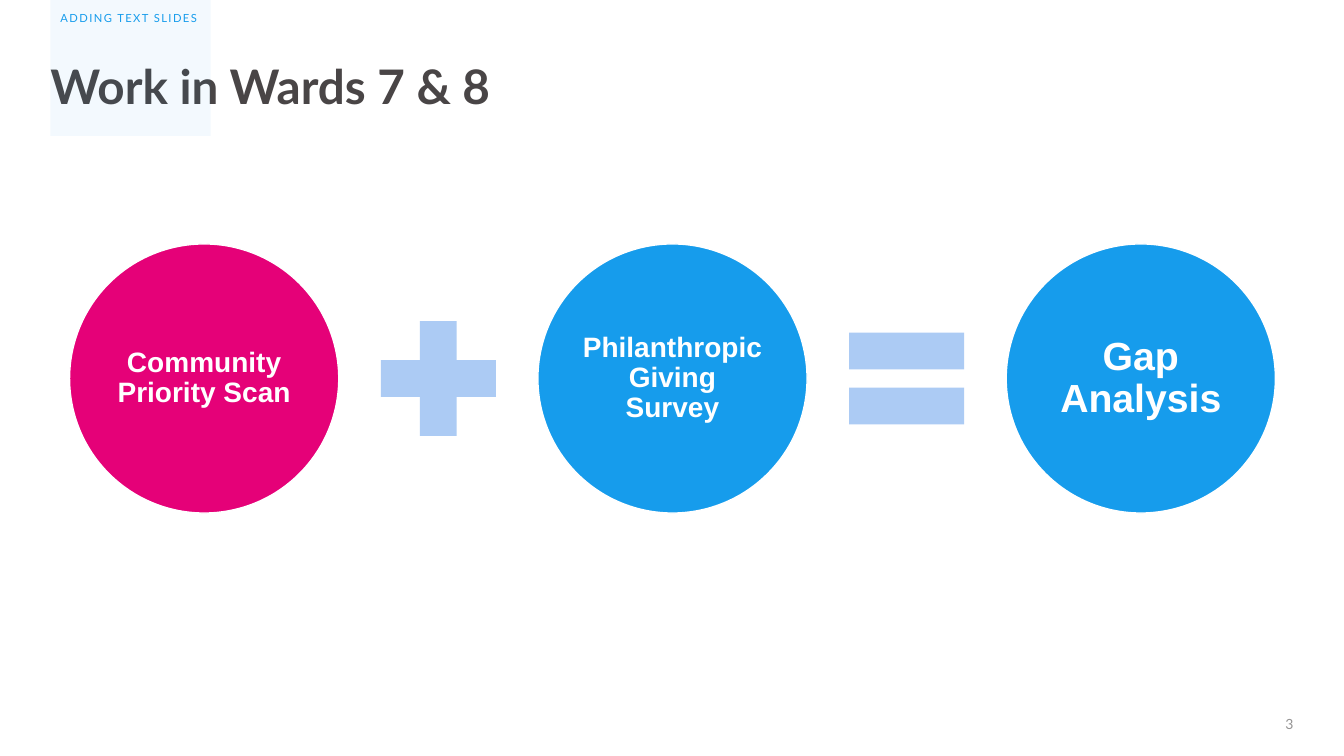
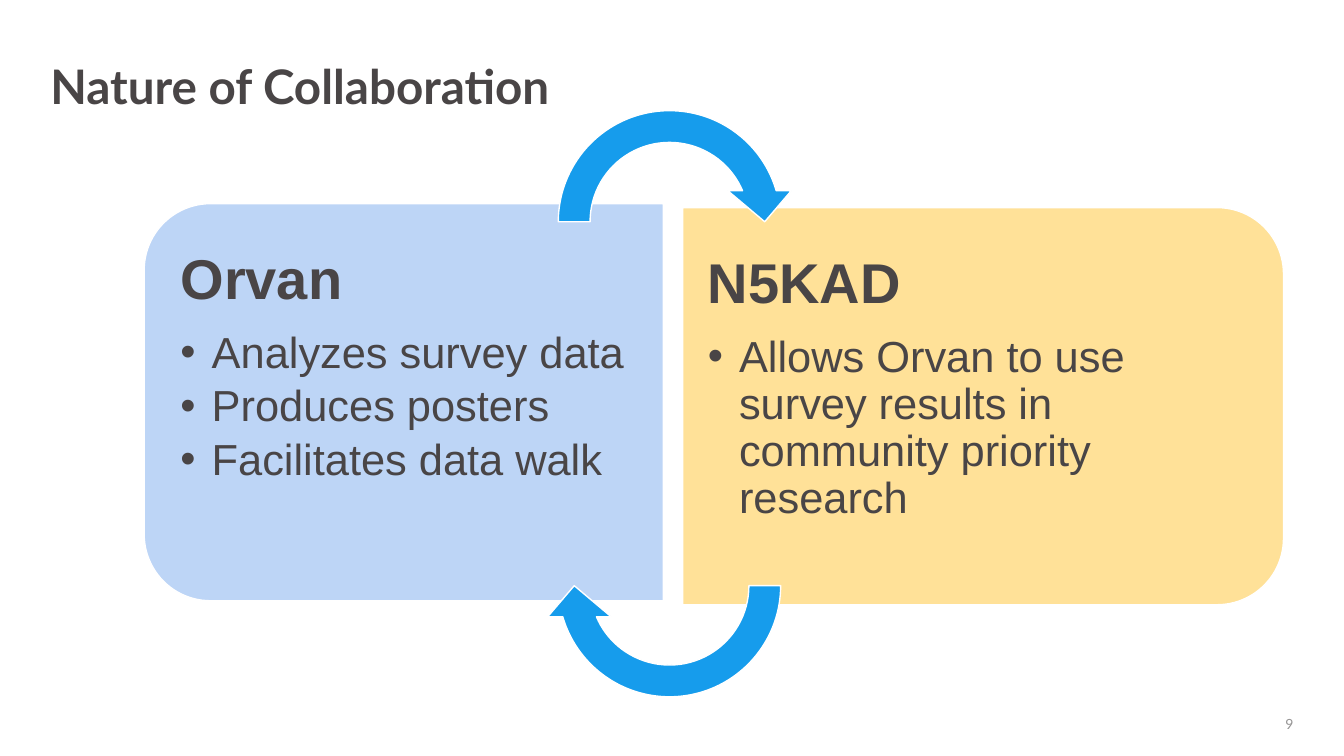
from dataclasses import dataclass

from lxml.etree import SubElement
from pptx import Presentation
from pptx.dml.color import RGBColor
from pptx.enum.shapes import MSO_SHAPE
from pptx.enum.text import MSO_ANCHOR, MSO_AUTO_SIZE, PP_ALIGN
from pptx.oxml.ns import qn
from pptx.util import Inches, Pt


@dataclass(frozen=True)
class Theme:
    """Colours, fonts and type sizes of the deck."""
    ink: str = "494546"
    grey: str = "959494"
    white: str = "FFFFFF"
    blue: str = "169CEC"
    pink: str = "E50178"
    symbol: str = "ACCBF4"
    pale_blue: str = "BDD5F6"
    pale_yellow: str = "FFE198"
    display: str = "Lato"
    text: str = "Arial"
    title_size: int = 34
    heading_size: int = 40
    bullet_size: int = 31
    result_size: int = 28
    term_size: int = 20
    number_size: int = 10
    tag_size: int = 8


@dataclass(frozen=True)
class Box:
    """A region of the page in inches."""
    left: float
    top: float
    width: float
    height: float

    def lengths(self):
        """Return the four measures as lengths."""
        return [Inches(v) for v in (self.left, self.top, self.width, self.height)]

    def turned(self):
        """Return the box with swapped sides about the same centre."""
        shift = (self.width - self.height) / 2
        return Box(self.left + shift, self.top - shift, self.height, self.width)


THEME = Theme()
TITLE_BOX = Box(0.5, 0.58, 12.33, 1.27)
NUMBER_BOX = Box(9.83, 7.07, 3, 0.23)
TAG_BOX = Box(0.5, 0.01, 1.59, 0.34)
TITLE_AND_BODY, TWO_BODIES = 1, 3


def place(shape, box):
    """Move a shape to a box."""
    shape.left, shape.top, shape.width, shape.height = box.lengths()


def set_frame(frame, insets, anchor, wrap=True, fit=MSO_AUTO_SIZE.NONE):
    """Set insets (left, top, right, bottom), anchor and wrapping."""
    frame.auto_size = fit
    frame.word_wrap = wrap
    frame.vertical_anchor = anchor
    (frame.margin_left, frame.margin_top,
     frame.margin_right, frame.margin_bottom) = [Inches(v) for v in insets]


def format_para(para, size, colour, font=THEME.text, bold=False,
                align=PP_ALIGN.LEFT, leading=0.9, after=0):
    """Format a paragraph and its runs."""
    para.alignment = align
    para.line_spacing = leading
    para.space_before = Pt(0)
    para.space_after = Pt(after)
    for span in para.runs:
        span.font.size = Pt(size)
        span.font.name = font
        span.font.bold = bold
        span.font.color.rgb = RGBColor.from_string(colour)


def set_bullet(para, hang=0):
    """Give a paragraph a hanging bullet, or none when there is no hang."""
    props = para._p.get_or_add_pPr()
    props.set("marL", str(Inches(hang)))
    props.set("indent", str(Inches(-hang)))
    if hang:
        SubElement(props, qn("a:buFont")).set("typeface", THEME.text)
        SubElement(props, qn("a:buChar")).set("char", "•")
    else:
        SubElement(props, qn("a:buNone"))


def add_shape(page, kind, box, colour, outlined=True, rotation=0, adjustments=()):
    """Add a flat filled shape, with a white outline if wanted."""
    shape = page.shapes.add_shape(kind, *box.lengths())
    shape.shadow.inherit = False
    shape.rotation = rotation
    for index, value in enumerate(adjustments):
        shape.adjustments[index] = value
    shape.fill.solid()
    shape.fill.fore_color.rgb = RGBColor.from_string(colour)
    if outlined:
        shape.line.color.rgb = RGBColor.from_string(THEME.white)
        shape.line.width = Pt(1)
    else:
        shape.line.fill.background()
    return shape


def add_page(deck, layout, title, number):
    """Add a page with its title and page number."""
    page = deck.slides.add_slide(deck.slide_layouts[layout])
    heading = page.shapes.title
    place(heading, TITLE_BOX)
    heading.text_frame.text = title
    set_frame(heading.text_frame, (0, 0.05, 0, 0.05), MSO_ANCHOR.TOP)
    format_para(heading.text_frame.paragraphs[0], THEME.title_size, THEME.ink,
                THEME.display, bold=True)
    label = page.shapes.add_textbox(*NUMBER_BOX.lengths())
    label.text_frame.text = str(number)
    set_frame(label.text_frame, (0, 0, 0, 0), MSO_ANCHOR.MIDDLE)
    format_para(label.text_frame.paragraphs[0], THEME.number_size, THEME.grey,
                THEME.display, align=PP_ALIGN.RIGHT, leading=1.0)
    return page


def fill_tag(tag, box, text):
    """Turn a body placeholder into a tinted section tag."""
    place(tag, box)
    tag.fill.solid()
    tag.fill.fore_color.rgb = RGBColor.from_string(THEME.blue)
    tint = tag.element.spPr.find(qn("a:solidFill"))[0]
    SubElement(tint, qn("a:alpha")).set("val", "5000")
    tag.text_frame.text = text
    set_frame(tag.text_frame, (0.1,) * 4, MSO_ANCHOR.MIDDLE, wrap=False,
              fit=MSO_AUTO_SIZE.SHAPE_TO_FIT_TEXT)
    para = tag.text_frame.paragraphs[0]
    set_bullet(para)
    format_para(para, THEME.tag_size, THEME.blue, THEME.display,
                leading=1.0, after=16)
    para.runs[0].font._element.set("spc", "100")


def add_equation(page, box, terms, symbols):
    """Spread circles over a box, with a symbol centred in each gap."""
    diameter, symbol_size = box.height, 1.55
    pitch = (box.width - diameter) / (len(terms) - 1)
    for index, (text, colour, size) in enumerate(terms):
        left = box.left + index * pitch
        circle = add_shape(page, MSO_SHAPE.OVAL,
                           Box(left, box.top, diameter, diameter), colour)
        circle.text_frame.text = text
        set_frame(circle.text_frame, (0.03,) * 4, MSO_ANCHOR.MIDDLE)
        format_para(circle.text_frame.paragraphs[0], size, THEME.white,
                    bold=True, align=PP_ALIGN.CENTER)
    for index, kind in enumerate(symbols):
        middle = box.left + index * pitch + (pitch + diameter) / 2
        add_shape(page, kind,
                  Box(middle - symbol_size / 2,
                      box.top + (diameter - symbol_size) / 2,
                      symbol_size, symbol_size),
                  THEME.symbol, outlined=False)


def add_partner_panel(page, body, box, colour, name, tasks, rounded_left):
    """Draw a panel with one rounded side and set a body list on it."""
    panel = add_shape(page, MSO_SHAPE.ROUND_2_SAME_RECTANGLE, box.turned(), colour,
                      rotation=270 if rounded_left else 90, adjustments=(0.167, 0))
    panel.element.addnext(body.element)
    inset = 0.19
    place(body, Box(box.left + (inset if rounded_left else 0), box.top + inset,
                    box.width - inset, box.height - 2 * inset))
    left, right = (0.17, 0.25) if rounded_left else (0.25, 0.17)
    frame = body.text_frame
    frame.text = "\n".join([name, *tasks])
    set_frame(frame, (left, 0.28, right, 0.28), MSO_ANCHOR.TOP)
    heading, *items = frame.paragraphs
    set_bullet(heading)
    format_para(heading, THEME.heading_size, THEME.ink, bold=True, after=14)
    for item in items:
        item.level = 1
        set_bullet(item, 0.31)
        format_para(item, THEME.bullet_size, THEME.ink, after=4.65)


def add_cycle(page, box):
    """Draw two half-circle arrows at the top and bottom of a box."""
    size = box.width
    for top, rotation in ((box.top, 0), (box.top + box.height - size, 180)):
        add_shape(page, MSO_SHAPE.CIRCULAR_ARROW, Box(box.left, top, size, size),
                  THEME.blue, rotation=rotation,
                  adjustments=(0.125, 11.423, 204.577, 108, 0.125))


def build_wards(deck):
    """Build the page on the work in the wards."""
    page = add_page(deck, TITLE_AND_BODY, "Work in Wards 7 & 8", 3)
    fill_tag(page.placeholders[1], TAG_BOX, "ADDING TEXT SLIDES")
    add_equation(
        page, Box(0.69, 2.42, 11.96, 2.67),
        [("Community Priority Scan", THEME.pink, THEME.term_size),
         ("Philanthropic Giving Survey", THEME.blue, THEME.term_size),
         ("Gap Analysis", THEME.blue, THEME.result_size)],
        [MSO_SHAPE.MATH_PLUS, MSO_SHAPE.MATH_EQUAL])


def build_collaboration(deck):
    """Build the page on the two partners."""
    page = add_page(deck, TWO_BODIES, "Nature of Collaboration", 9)
    add_partner_panel(
        page, page.placeholders[1], Box(1.43, 2.02, 5.15, 3.94), THEME.pale_blue,
        "Orvan",
        ["Analyzes survey data", "Produces posters", "Facilitates data walk"],
        rounded_left=True)
    add_partner_panel(
        page, page.placeholders[2], Box(6.77, 2.06, 5.96, 3.94), THEME.pale_yellow,
        "N5KAD",
        ["Allows Orvan to use survey results in community priority research"],
        rounded_left=False)
    add_cycle(page, Box(5.38, 0.94, 2.52, 6.13))


def main():
    """Build and save the deck."""
    deck = Presentation()
    deck.slide_width, deck.slide_height = Inches(13.33), Inches(7.5)
    build_wards(deck)
    build_collaboration(deck)
    deck.save("out.pptx")


if __name__ == "__main__":
    main()
